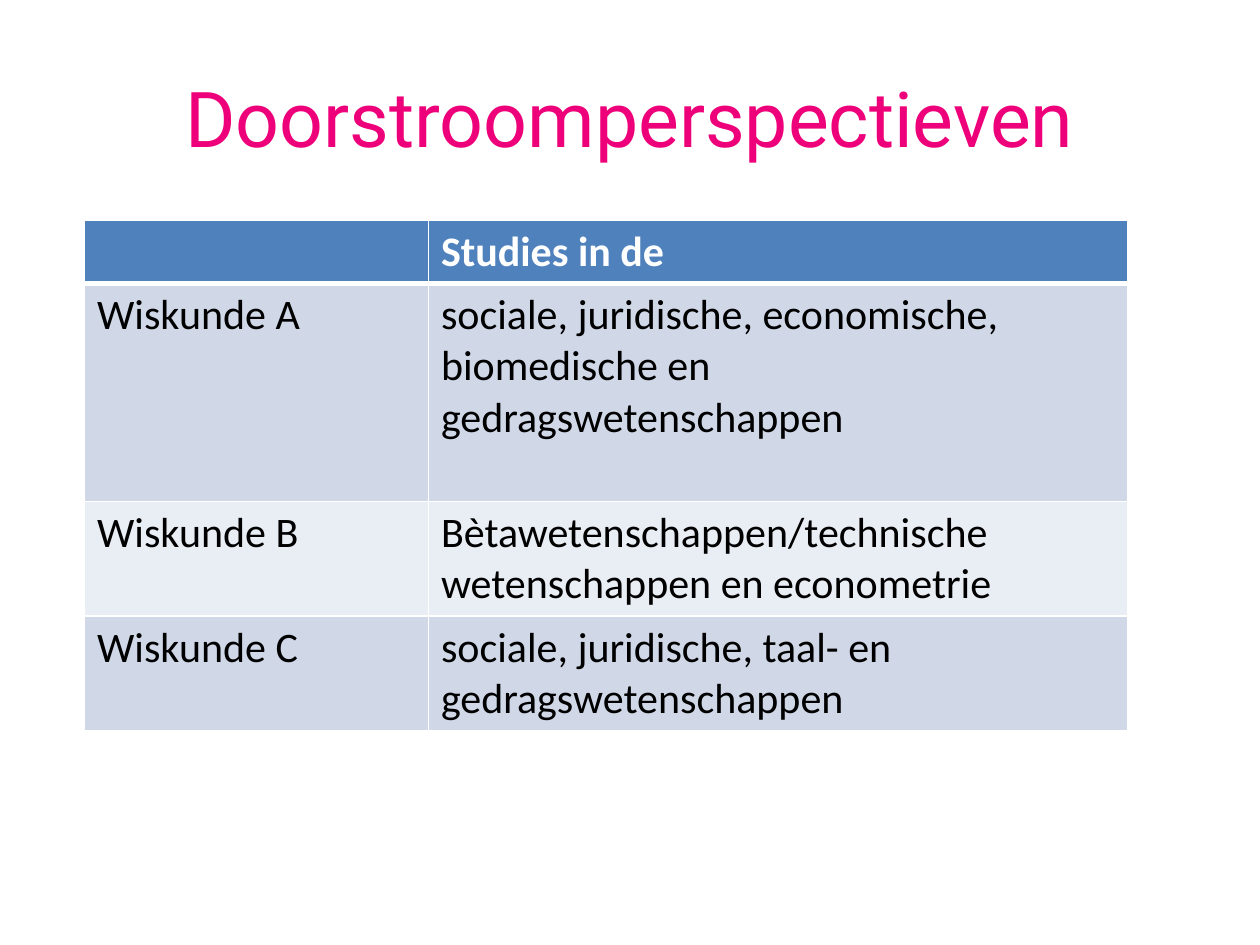
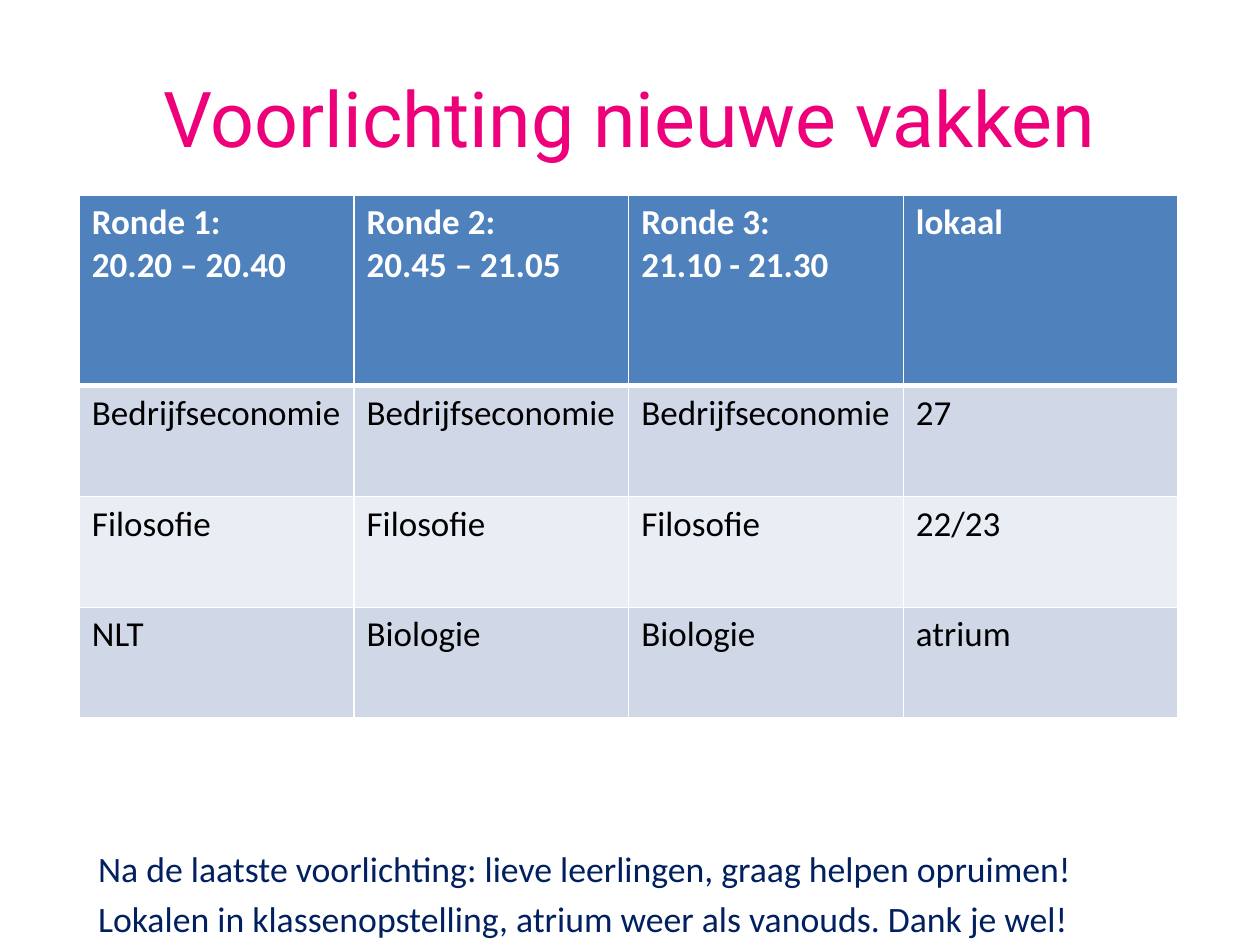
import pptx
import pptx.util
import pptx.dml.color
import pptx.enum.text
import pptx.oxml.ns
import lxml.etree

Inches = pptx.util.Inches
Pt = pptx.util.Pt
Color = pptx.dml.color.RGBColor
PINK = Color(0xED, 0x00, 0x7A)
BLUE = Color(0x4F, 0x81, 0xBD)
BANDS = [Color(0xE9, 0xED, 0xF4), Color(0xD0, 0xD8, 0xE8)]
NAVY = Color(0x00, 0x20, 0x60)
WHITE = Color(0xFF, 0xFF, 0xFF)
BLACK = Color(0, 0, 0)


class Deck:
    title_font = "Roboto"
    body_font = "Calibri"

    def __init__(self):
        self.file = pptx.Presentation()
        self.file.slide_width = Inches(10)
        self.file.slide_height = Inches(7.5)
        self.slide = None

    def page(self, title):
        self.slide = self.file.slides.add_slide(self.file.slide_layouts[6])
        frame = self.text([title], 0.5, 0.3, 9, 1.25, 44, PINK, self.title_font)
        frame.vertical_anchor = pptx.enum.text.MSO_ANCHOR.MIDDLE
        frame.paragraphs[0].alignment = pptx.enum.text.PP_ALIGN.CENTER

    def style(self, frame, size, color, font, bold=False):
        for para in frame.paragraphs:
            for run in para.runs:
                run.font.name = font
                run.font.size = Pt(size)
                run.font.bold = bold
                run.font.color.rgb = color

    def text(self, lines, left, top, width, height, size, color, font, gap=0):
        box = self.slide.shapes.add_textbox(
            Inches(left), Inches(top), Inches(width), Inches(height))
        frame = box.text_frame
        frame.word_wrap = True
        frame.text = "\n".join(lines)
        for para in frame.paragraphs[1:]:
            para.space_before = Pt(gap)
        self.style(frame, size, color, font)
        return frame

    def border(self, cell, row):
        props = cell._tc.get_or_add_tcPr()
        heavy = {(0, "B"), (1, "T")}
        for side in "LRTB":
            line = lxml.etree.SubElement(
                props, pptx.oxml.ns.qn("a:ln" + side),
                w=str(Pt(3 if (row, side) in heavy else 1)))
            fill = lxml.etree.SubElement(line, pptx.oxml.ns.qn("a:solidFill"))
            lxml.etree.SubElement(
                fill, pptx.oxml.ns.qn("a:srgbClr"), val=str(WHITE))

    def table(self, rows, left, top, widths, heights, size):
        table = self.slide.shapes.add_table(
            len(rows), len(widths), Inches(left), Inches(top),
            Inches(sum(widths)), Inches(sum(heights))).table
        for column, width in zip(table.columns, widths):
            column.width = Inches(width)
        for row, height in zip(table.rows, heights):
            row.height = Inches(height)
        for r, words in enumerate(rows):
            head = r == 0
            for c, word in enumerate(words):
                cell = table.cell(r, c)
                cell.text_frame.text = word
                self.style(cell.text_frame, size, WHITE if head else BLACK,
                           self.body_font, head)
                self.border(cell, r)
                cell.fill.solid()
                cell.fill.fore_color.rgb = BLUE if head else BANDS[r % 2]


def main():
    deck = Deck()

    deck.page("Doorstroomperspectieven")
    studies = [
        ["", "Studies in de"],
        ["Wiskunde A", "sociale, juridische, economische, biomedische en "
                       "gedragswetenschappen"],
        ["Wiskunde B", "Bètawetenschappen/technische wetenschappen en "
                       "econometrie"],
        ["Wiskunde C", "sociale, juridische, taal- en gedragswetenschappen"],
    ]
    deck.table(studies, 0.67, 1.75, [2.73, 5.55], [0.5, 1.73, 0.91, 0.91], 24)

    deck.page("Voorlichting nieuwe vakken")
    rounds = [
        ["Ronde 1:\n20.20 – 20.40", "Ronde 2:\n20.45 – 21.05",
         "Ronde 3:\n21.10 - 21.30", "lokaal"],
        ["Bedrijfseconomie"] * 3 + ["27"],
        ["Filosofie"] * 3 + ["22/23"],
        ["NLT", "Biologie", "Biologie", "atrium"],
    ]
    deck.table(rounds, 0.63, 1.55, [2.18] * 4, [1.51] + [0.88] * 3, 20)
    deck.text(
        ["Na de laatste voorlichting: lieve leerlingen, graag helpen opruimen!",
         "Lokalen in klassenopstelling, atrium weer als vanouds. Dank je wel!"],
        0.68, 6.67, 8.85, 0.83, 20.4, NAVY, deck.body_font, 4)

    deck.file.save("out.pptx")


if __name__ == "__main__":
    main()
